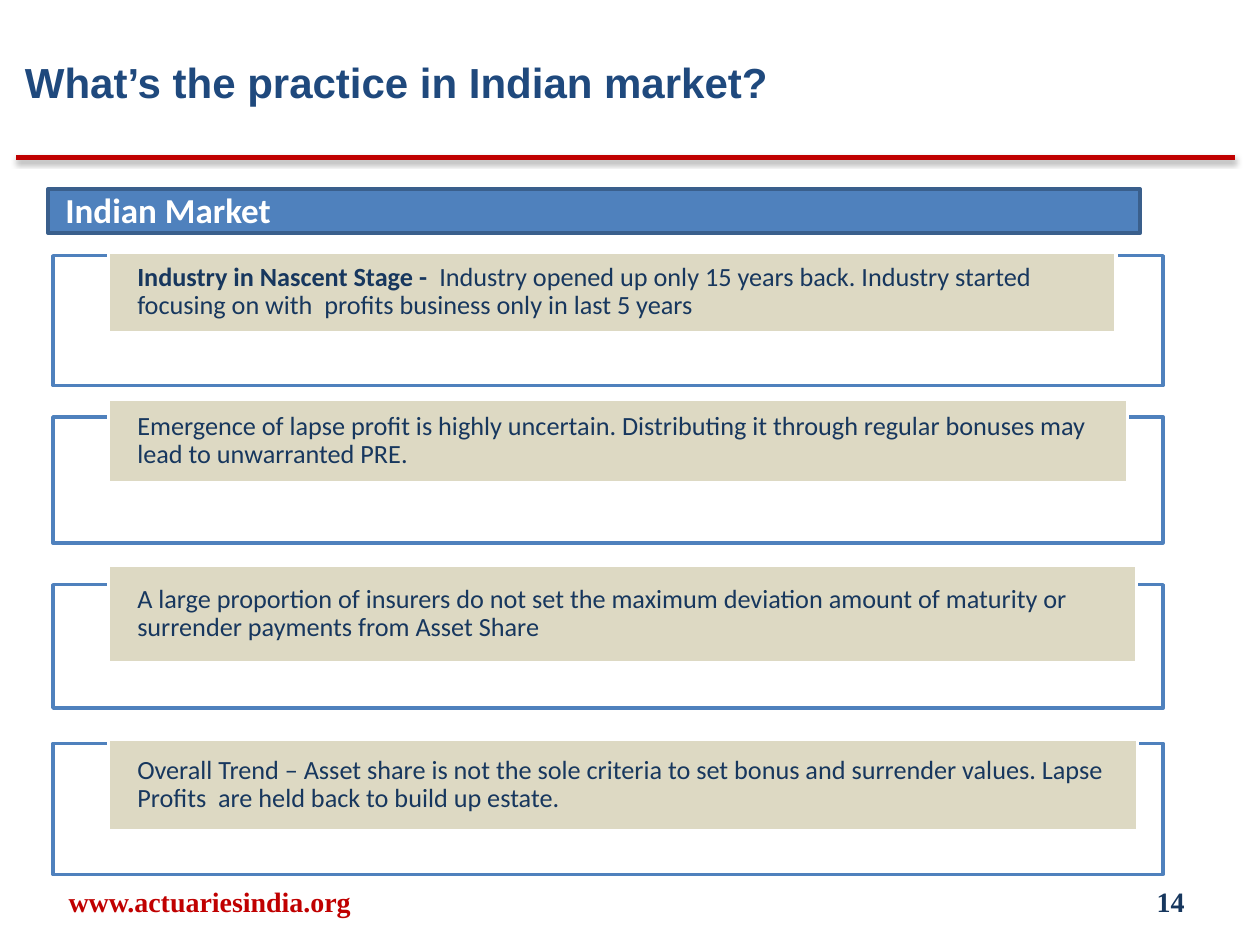
"""Build the slide on bonus practice in the Indian market."""
import pptx
import pptx.dml.color
import pptx.enum.shapes
import pptx.enum.text
import pptx.oxml
import pptx.oxml.ns
import pptx.util

Inches, Pt = pptx.util.Inches, pptx.util.Pt
ALIGN = pptx.enum.text.PP_ALIGN
SHAPE = pptx.enum.shapes.MSO_SHAPE
ANCHOR = pptx.enum.text.MSO_ANCHOR

COLORS = {
    "navy": "17375E", "title": "1F497D", "red": "C00000", "blue": "4F81BD",
    "edge": "3A5F8C", "tan": "DDD9C3", "white": "FFFFFF",
}
WIDTH, HEIGHT = 10, 7.5
FRAME_LEFT, FRAME_WIDTH, LABEL_LEFT = 0.42, 8.81, 0.86
LABEL_INSET = 0.23

LABELS = [
    ("What’s the practice in Indian market?", (0.1, 0.02, 9, 1.25), "Arial", 24, "title", ALIGN.LEFT),
    ("www.actuariesindia.org", (0.08, 6.95, 3.17, 0.4), "Times New Roman", 16, "red", ALIGN.CENTER),
    ("14", (7.17, 6.95, 2.33, 0.4), "Times New Roman", 16, "navy", ALIGN.RIGHT),
    ("Indian Market", (0.42, 1.44, 5.25, 0.44), "Calibri", 20, "white", ALIGN.LEFT),
]
POINTS = [
    {"frame": (2.03, 1.03), "label": (2, 8, 0.64), "runs": [
        ("Industry in Nascent Stage - ", True),
        (" Industry opened up only 15 years back. Industry started focusing on "
         "with  profits business only in last 5 years", False)]},
    {"frame": (3.31, 1), "label": (3.17, 8.09, 0.66), "runs": [
        ("Emergence of lapse profit is highly uncertain. Distributing it through "
         "regular bonuses may lead to unwarranted PRE.", False)]},
    {"frame": (4.64, 0.98), "label": (4.49, 8.16, 0.77), "runs": [
        ("A large proportion of insurers do not set the maximum deviation amount of "
         "maturity or surrender payments from Asset Share", False)]},
    {"frame": (5.9, 1.04), "label": (5.87, 8.17, 0.72), "runs": [
        ("Overall Trend – Asset share is not the sole criteria to set bonus and "
         "surrender values. Lapse Profits  are held back to build up estate.", False)]},
]
SHADOW = (
    f'<a:effectLst {pptx.oxml.ns.nsdecls("a")}>'
    '<a:outerShdw blurRad="39370" dist="20320" dir="5400000" rotWithShape="0">'
    '<a:srgbClr val="000000"><a:alpha val="38000"/></a:srgbClr>'
    '</a:outerShdw></a:effectLst>'
)


def color(name):
    return pptx.dml.color.RGBColor.from_string(COLORS[name])


def add_panel(page, kind, place, fill, line):
    panel = page.shapes.add_shape(kind, *map(Inches, place))
    panel.shadow.inherit = False
    panel.fill.solid()
    panel.fill.fore_color.rgb = color(fill)
    panel.line.color.rgb = color(line)
    panel.line.width = Pt(2)
    return panel


def set_font(font, face, size, name):
    font.name, font.size, font.color.rgb = face, Pt(size), color(name)


def add_label(page, text, place, face, size, name, align):
    box = page.shapes.add_textbox(*map(Inches, place))
    frame = box.text_frame
    frame.word_wrap = True
    frame.vertical_anchor = ANCHOR.MIDDLE
    para = frame.paragraphs[0]
    para.text, para.alignment = text, align
    set_font(para.font, face, size, name)
    para.font.bold = True


def add_rule(page):
    rule = page.shapes.add_connector(
        pptx.enum.shapes.MSO_CONNECTOR.STRAIGHT,
        *map(Inches, (0.13, WIDTH / 8, 9.8, WIDTH / 8)))
    rule.line.color.rgb = color("red")
    rule.line.width = Pt(3)
    rule._element.spPr.append(pptx.oxml.parse_xml(SHADOW))


def add_point(page, point):
    top, height = point["frame"]
    outline = add_panel(page, SHAPE.RECTANGLE, (FRAME_LEFT, top, FRAME_WIDTH, height), "white", "blue")
    tint = outline.fill._xPr.find(".//" + pptx.oxml.ns.qn("a:srgbClr"))
    tint.append(pptx.oxml.parse_xml(f'<a:alpha {pptx.oxml.ns.nsdecls("a")} val="90000"/>'))

    label = add_panel(page, SHAPE.RECTANGLE, (LABEL_LEFT, *point["label"]), "tan", "white")
    frame = label.text_frame
    frame.word_wrap = True
    frame.vertical_anchor = ANCHOR.MIDDLE
    frame.margin_left = frame.margin_right = Inches(LABEL_INSET)
    frame.margin_top = frame.margin_bottom = 0
    para = frame.paragraphs[0]
    para.alignment, para.line_spacing = ALIGN.LEFT, 0.9
    set_font(para.font, "Calibri", 15, "navy")
    for text, bold in point["runs"]:
        span = para.add_run()
        span.text, span.font.bold = text, bold
        set_font(span.font, "Calibri", 15, "navy")


def main():
    deck = pptx.Presentation()
    deck.slide_width, deck.slide_height = Inches(WIDTH), Inches(HEIGHT)
    page = deck.slides.add_slide(deck.slide_layouts[6])
    add_rule(page)
    add_panel(page, SHAPE.FLOWCHART_PROCESS, (0.38, 1.5, 8.67, 0.35), "blue", "edge")
    for label in LABELS:
        add_label(page, *label)
    for point in POINTS:
        add_point(page, point)
    deck.save("out.pptx")


if __name__ == "__main__":
    main()
